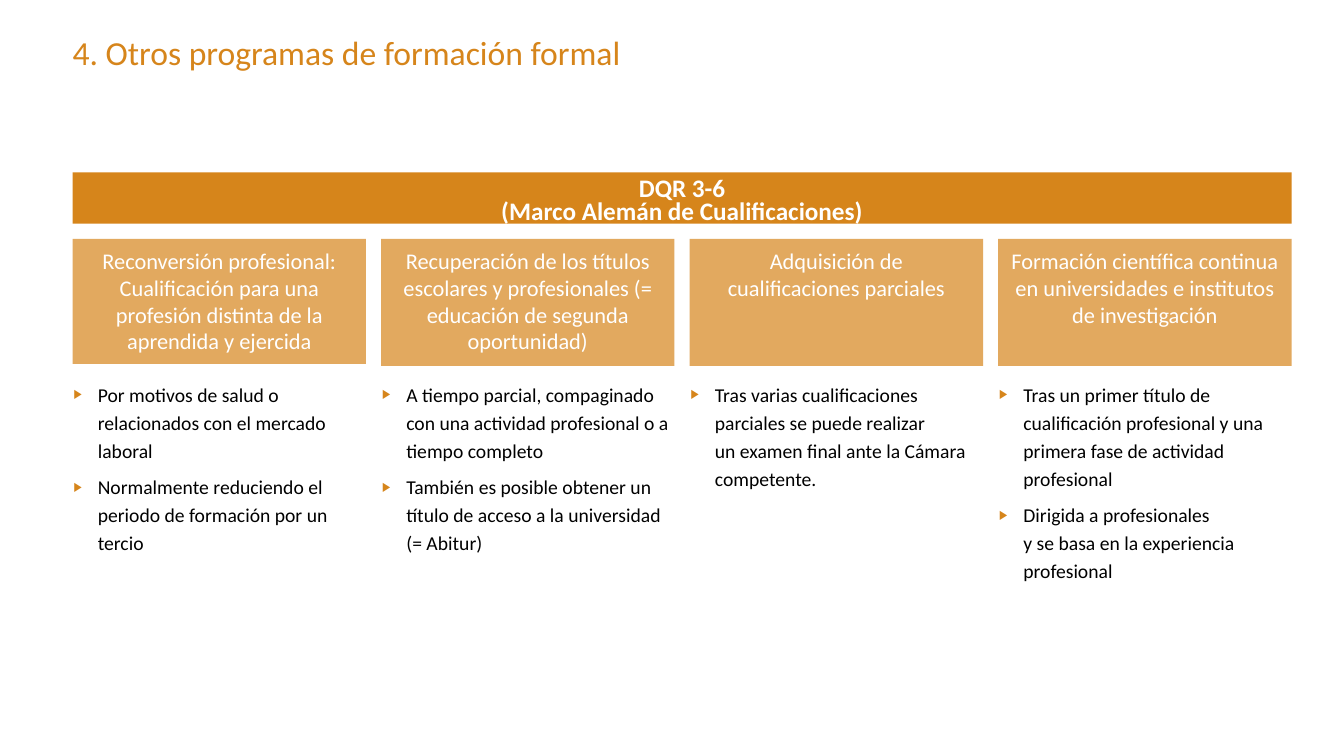
from lxml.etree import SubElement
from pptx import Presentation
from pptx.dml.color import RGBColor
from pptx.enum.shapes import MSO_SHAPE
from pptx.enum.text import MSO_ANCHOR, MSO_AUTO_SIZE, PP_ALIGN
from pptx.oxml.ns import qn
from pptx.util import Emu, Pt

ORANGE = RGBColor(0xD6, 0x85, 0x1B)
LIGHT_ORANGE = RGBColor(0xE2, 0xA9, 0x5F)
WHITE = RGBColor(0xFF, 0xFF, 0xFF)
BLACK = RGBColor(0, 0, 0)

LEFT = 72
COLUMN_WIDTH = 291
COLUMN_STEP = 306
LIST_OUTDENT = 30

COLUMNS = [
    ("Reconversión profesional:\nCualificación para una profesión distinta de la aprendida y ejercida", 124,
     ["Por motivos de salud o relacionados con el mercado laboral",
      "Normalmente reduciendo el periodo de formación por un tercio"]),
    ("Recuperación de los títulos escolares y profesionales (= educación de segunda oportunidad)", 126,
     ["A tiempo parcial, compaginado con una actividad profesional o a tiempo completo",
      "También es posible obtener un título de acceso a la universidad (= Abitur)"]),
    ("Adquisición de\ncualificaciones parciales", 126,
     ["Tras varias cualificaciones parciales se puede realizar\nun examen final ante la Cámara competente."]),
    ("Formación científica continua en universidades e institutos de investigación", 126,
     ["Tras un primer título de cualificación profesional y una primera fase de actividad profesional",
      "Dirigida a profesionales\ny se basa en la experiencia profesional"]),
]


def px(length):
    return Emu(length * 9144)


class SlideBuilder:
    """Holds the style and the current slide, and adds its elements."""

    font_name = "Calibri"

    def __init__(self, page):
        self.page = page

    def place(self, shape, left, top, width, height):
        shape.left, shape.top = px(left), px(top)
        shape.width, shape.height = px(width), px(height)

    def prepare(self, frame, insets, anchor=MSO_ANCHOR.TOP):
        frame.word_wrap = True
        frame.auto_size = MSO_AUTO_SIZE.NONE
        frame.vertical_anchor = anchor
        frame.margin_left, frame.margin_top, frame.margin_right, frame.margin_bottom = map(px, insets)

    def fill_text(self, para, text, size, color, bold=False):
        para.text = text
        for span in para.runs:
            span.font.name = self.font_name
            span.font.size = Pt(size)
            span.font.bold = bold
            span.font.color.rgb = color

    def title(self, text, left, top, width, height):
        box = self.page.shapes.title
        self.place(box, left, top, width, height)
        self.prepare(box.text_frame, (0, 0, 0, 0))
        para = box.text_frame.paragraphs[0]
        para.alignment = PP_ALIGN.LEFT
        self.fill_text(para, text, 24, ORANGE)

    def block(self, text, left, top, width, height, fill, size, insets,
              anchor=MSO_ANCHOR.TOP, bold=False, spacing=None):
        box = self.page.shapes.add_shape(
            MSO_SHAPE.RECTANGLE, px(left), px(top), px(width), px(height))
        box.shadow.inherit = False
        box.fill.solid()
        box.fill.fore_color.rgb = fill
        box.line.fill.background()
        self.prepare(box.text_frame, insets, anchor)
        para = box.text_frame.paragraphs[0]
        para.alignment = PP_ALIGN.CENTER
        para.line_spacing = spacing
        self.fill_text(para, text, size, WHITE, bold)

    def bullet(self, para):
        properties = para._p.get_or_add_pPr()
        properties.set("marL", str(px(55)))
        properties.set("indent", str(px(-24)))
        color = SubElement(properties, qn("a:buClr"))
        SubElement(color, qn("a:srgbClr"), val=str(ORANGE))
        SubElement(properties, qn("a:buSzPct"), val="65000")
        SubElement(properties, qn("a:buFont"), typeface="Arial")
        SubElement(properties, qn("a:buChar"), char="▶")

    def bullet_list(self, box, items, left, top, width, height):
        self.place(box, left, top, width, height)
        frame = box.text_frame
        self.prepare(frame, (0, 0, 0, 0))
        for index, item in enumerate(items):
            para = frame.add_paragraph() if index else frame.paragraphs[0]
            para.level = 1
            self.bullet(para)
            para.alignment = PP_ALIGN.LEFT
            para.line_spacing = Pt(20)
            para.space_before = Pt(6 if index else 0)
            self.fill_text(para, item, 14, BLACK)


def main():
    deck = Presentation()
    deck.slide_width, deck.slide_height = px(1333), px(750)
    page = deck.slides.add_slide(deck.slide_layouts.get_by_name("Comparison"))
    builder = SlideBuilder(page)

    builder.title("4. Otros programas de formación formal", LEFT, 32, 984, 49)
    builder.block("DQR 3-6\n(Marco Alemán de Cualificaciones)",
                  LEFT, 171, 3 * COLUMN_STEP + COLUMN_WIDTH, 51, ORANGE, 18,
                  (4, 8, 4, 0), MSO_ANCHOR.MIDDLE, True, Pt(17))

    list_boxes = list(page.placeholders)[1:]
    for index, (heading, height, items) in enumerate(COLUMNS):
        left = LEFT + index * COLUMN_STEP
        builder.block(heading, left, 237, COLUMN_WIDTH, height,
                      LIGHT_ORANGE, 16, (4, 8, 4, 8))
        builder.bullet_list(list_boxes[index], items, left - LIST_OUTDENT, 375,
                            COLUMN_WIDTH + LIST_OUTDENT, 225)

    deck.save("out.pptx")


if __name__ == "__main__":
    main()
